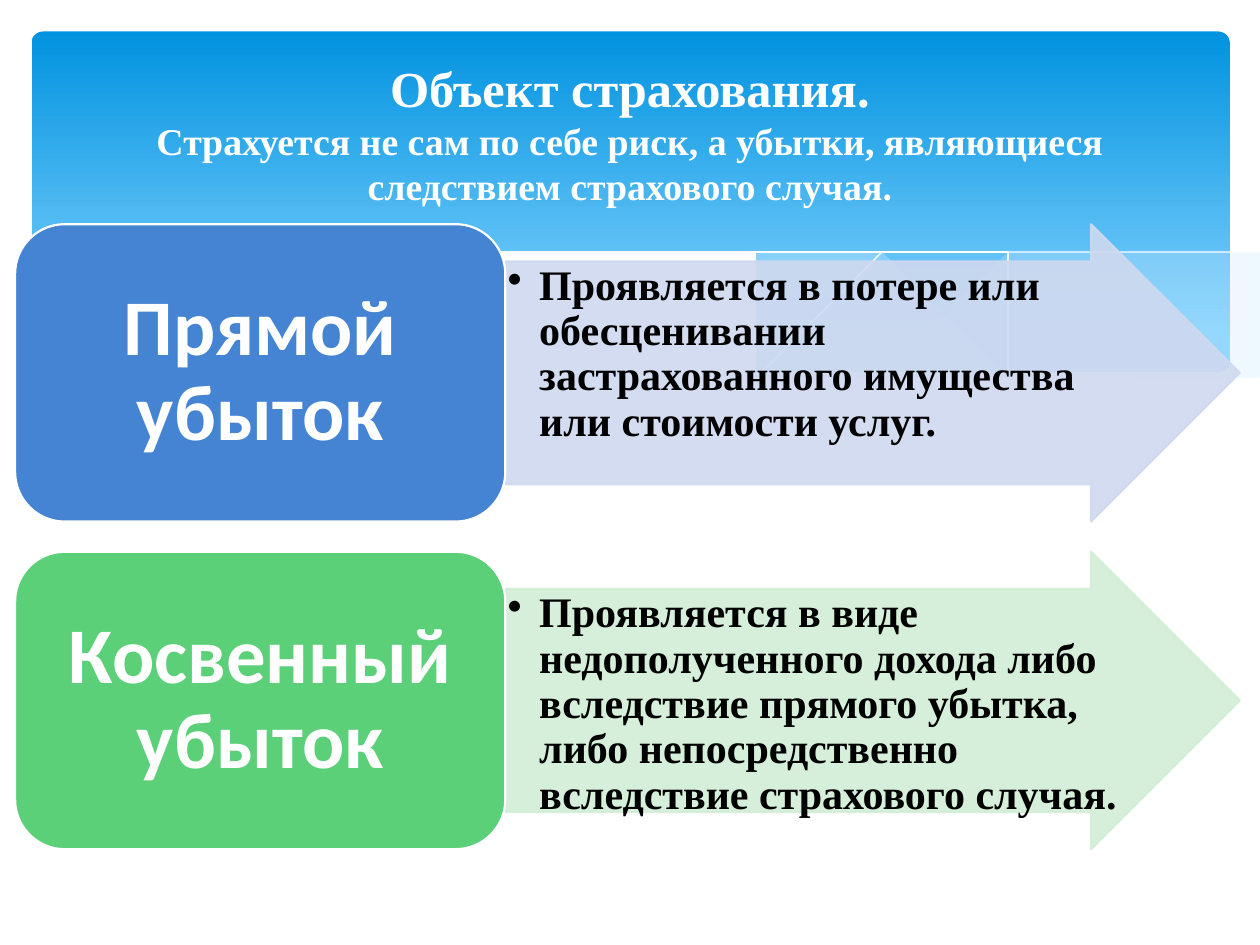
from dataclasses import dataclass
from itertools import chain

from lxml import etree
from pptx import Presentation
from pptx.dml.color import RGBColor
from pptx.enum.shapes import MSO_SHAPE
from pptx.enum.text import MSO_ANCHOR, PP_ALIGN
from pptx.oxml.ns import qn
from pptx.util import Inches, Pt

ROUNDED, ARROW = MSO_SHAPE.ROUNDED_RECTANGLE, MSO_SHAPE.RIGHT_ARROW
TOP, MIDDLE = MSO_ANCHOR.TOP, MSO_ANCHOR.MIDDLE
LEFT, CENTER = PP_ALIGN.LEFT, PP_ALIGN.CENTER

COLUMNS, ROWS = 10, 7.5
WIDTH, HEIGHT = Inches(10), Inches(7.5)
CELL = WIDTH // COLUMNS

Point = tuple[float, float]


@dataclass(frozen=True)
class Theme:
    sky: str = "0293E0"
    haze: str = "83D3FE"
    mist: str = "C6E7FC"
    white: str = "FFFFFF"
    black: str = "000000"
    serif: str = "Times New Roman"
    sans: str = "Calibri"
    heading: float = 28.8
    subheading: float = 21.6
    label: float = 45
    body: float = 24
    outline: float = 1.25


@dataclass(frozen=True)
class Box:
    """A place on the grid, in columns and rows."""
    left: float
    top: float
    width: float
    height: float

    def emu(self) -> list[int]:
        return [round(v * CELL) for v in (self.left, self.top, self.width, self.height)]


@dataclass(frozen=True)
class Loss:
    name: str
    meaning: str
    color: str
    tint: str


@dataclass(frozen=True)
class Wave:
    """Smooth edges joined end to end; without a fill it is an open line."""
    edges: list[list[Point]]
    fill: str | None = None
    opacity: int = 100


THEME = Theme()
BANNER = Box(0.25, 0.25, 9.51, 2.7)
TITLE = Box(0.5, 0.37, 9, 1.37)
LABEL_LEFT, LABEL_WIDTH, ARROW_WIDTH = 0.12, 3.89, 5.83
FIRST_TOP, LOSS_HEIGHT, LOSS_STEP = 1.78, 2.36, 2.6

LOSSES = [
    Loss("Прямой убыток",
         "Проявляется в потере или обесценивании застрахованного имущества "
         "или стоимости услуг.", "4584D3", "CFD9EF"),
    Loss("Косвенный убыток",
         "Проявляется в виде недополученного дохода либо вследствие прямого убытка, "
         "либо непосредственно вследствие страхового случая.", "5BD078", "D2EED6"),
]

WAVES = [
    Wave([[(9.76, 2), (9.35, 2.07), (8.61, 2.23), (7.79, 2.42), (7.06, 2.57), (6.61, 2.65)],
          [(6.61, 2.65), (7.19, 2.72), (7.69, 2.77), (8.14, 2.78), (8.54, 2.76),
           (8.97, 2.7), (9.35, 2.62), (9.76, 2.47)]], THEME.mist, 29),
    Wave([[(8.93, 2.73), (8.37, 2.65), (7.75, 2.54), (7.06, 2.4), (6.29, 2.22), (5.69, 2.08),
           (5.14, 1.98), (4.65, 1.91), (4.2, 1.87), (3.8, 1.85), (3.28, 1.87), (2.86, 1.91)],
          [(2.86, 1.91), (3.42, 1.99), (4.04, 2.11), (4.91, 2.32), (5.66, 2.48), (6.34, 2.61),
           (6.95, 2.7), (7.48, 2.76), (7.96, 2.78), (8.48, 2.77), (8.93, 2.73)]],
         THEME.mist, 40),
    Wave([[(3.09, 1.95), (3.53, 1.89), (4.01, 1.87), (4.5, 1.88), (5.1, 1.92), (5.82, 2),
           (6.65, 2.13), (7.27, 2.26), (7.95, 2.41), (8.69, 2.61), (9.07, 2.72)]]),
    Wave([[(6.13, 2.57), (6.72, 2.41), (7.48, 2.23), (8.06, 2.1), (8.66, 1.99),
           (9.24, 1.9), (9.75, 1.85)]]),
    Wave([[(9.77, 2.46), (9.4, 2.59), (8.99, 2.69), (8.5, 2.75), (8.09, 2.77), (7.61, 2.75),
           (7.08, 2.7), (6.48, 2.62), (5.79, 2.5), (5.03, 2.33), (4.47, 2.2), (3.91, 2.07),
           (3.4, 1.97), (2.92, 1.9), (2.5, 1.86), (2.11, 1.84), (1.77, 1.84), (1.32, 1.86),
           (0.95, 1.91), (0.59, 1.99), (0.23, 2.13)],
          [(0.23, 3.29), (9.77, 3.29)]], THEME.white),
]


def rgb(color: str) -> RGBColor:
    return RGBColor.from_string(color)


def smooth(anchors: list[Point], steps: int = 4) -> list[Point]:
    """Sample a Catmull-Rom curve through the anchors."""
    padded = [anchors[0], *anchors, anchors[-1]]
    curve = [anchors[0]]
    for a, b, c, d in zip(padded, padded[1:], padded[2:], padded[3:]):
        for step in range(1, steps + 1):
            t = step / steps
            curve.append(tuple(
                q + t * (r - p) / 2 + t**2 * (2 * p - 5 * q + 4 * r - s) / 2
                + t**3 * (3 * q - p - 3 * r + s) / 2
                for p, q, r, s in zip(a, b, c, d)))
    return curve


def paint(shape, fill: str | None, line: str | None, width: float = 0,
          opacity: int = 100) -> None:
    shape.shadow.inherit = False
    if fill:
        shape.fill.solid()
        shape.fill.fore_color.rgb = rgb(fill)
    else:
        shape.fill.background()
    if line:
        shape.line.color.rgb = rgb(line)
        shape.line.width = Pt(width)
    else:
        shape.line.fill.background()
    if opacity < 100:
        for color in shape.element.iter(qn("a:srgbClr")):
            etree.SubElement(color, qn("a:alpha"), val=str(opacity * 1000))


def add_run(paragraph, text: str, font: str, size: float, color: str) -> None:
    run = paragraph.add_run()
    run.text = text
    run.font.name, run.font.size, run.font.bold = font, Pt(size), True
    run.font.color.rgb = rgb(color)


def open_text(shape, anchor, align, side: float = 0.1, edge: float = 0.05):
    """Set up the text frame and return its first paragraph."""
    frame = shape.text_frame
    frame.word_wrap, frame.vertical_anchor = True, anchor
    frame.margin_left = frame.margin_right = Inches(side)
    frame.margin_top = frame.margin_bottom = Inches(edge)
    paragraph = frame.paragraphs[0]
    paragraph.alignment = align
    return paragraph


def add_bullet(paragraph, indent: float) -> None:
    properties = paragraph._p.get_or_add_pPr()
    properties.set("marL", str(Inches(indent)))
    properties.set("indent", str(-Inches(indent)))
    etree.SubElement(properties, qn("a:buChar"), char="•")


def draw_banner(shapes) -> None:
    banner = shapes.add_shape(ROUNDED, *BANNER.emu())
    banner.adjustments[0] = 0.034
    paint(banner, None, None)
    banner.fill.gradient()
    banner.fill.gradient_angle = 270
    for stop, color, position in zip(banner.fill.gradient_stops,
                                     (THEME.sky, THEME.haze), (0, 0.9)):
        stop.color.rgb, stop.position = rgb(color), position


def draw_wave(shapes, wave: Wave) -> None:
    start, *rest = chain.from_iterable(smooth(edge) for edge in wave.edges)
    builder = shapes.build_freeform(*start, scale=CELL)
    builder.add_line_segments(rest, close=bool(wave.fill))
    paint(builder.convert_to_shape(), wave.fill, None if wave.fill else THEME.white,
          opacity=wave.opacity)


def draw_loss(shapes, loss: Loss, top: float) -> None:
    arrow = shapes.add_shape(
        ARROW, *Box(LABEL_LEFT + LABEL_WIDTH, top, ARROW_WIDTH, LOSS_HEIGHT).emu())
    arrow.adjustments[0], arrow.adjustments[1] = 0.75, 0.5
    paint(arrow, loss.tint, loss.tint, THEME.outline, opacity=90)
    meaning = open_text(arrow, TOP, LEFT, 0.02, 0.02)
    meaning.line_spacing = 0.9
    add_bullet(meaning, 0.25)
    add_run(meaning, loss.meaning, THEME.serif, THEME.body, THEME.black)

    label = shapes.add_shape(ROUNDED, *Box(LABEL_LEFT, top, LABEL_WIDTH, LOSS_HEIGHT).emu())
    paint(label, loss.color, THEME.white, THEME.outline)
    name = open_text(label, MIDDLE, CENTER, 0.19, 0.09)
    name.line_spacing = 0.9
    add_run(name, loss.name, THEME.sans, THEME.label, THEME.white)


def draw_title(shapes) -> None:
    title = open_text(shapes.add_textbox(*TITLE.emu()), MIDDLE, CENTER)
    add_run(title, "Объект страхования.", THEME.serif, THEME.heading, THEME.white)
    title.add_line_break()
    add_run(title, "Страхуется не сам по себе риск, а убытки, являющиеся следствием "
                   "страхового случая.", THEME.serif, THEME.subheading, THEME.white)


def main() -> None:
    deck = Presentation()
    deck.slide_width, deck.slide_height = WIDTH, HEIGHT
    shapes = deck.slides.add_slide(deck.slide_layouts[6]).shapes
    draw_banner(shapes)
    for wave in WAVES:
        draw_wave(shapes, wave)
    for row, loss in enumerate(LOSSES):
        draw_loss(shapes, loss, FIRST_TOP + row * LOSS_STEP)
    draw_title(shapes)
    deck.save("out.pptx")


if __name__ == "__main__":
    main()
